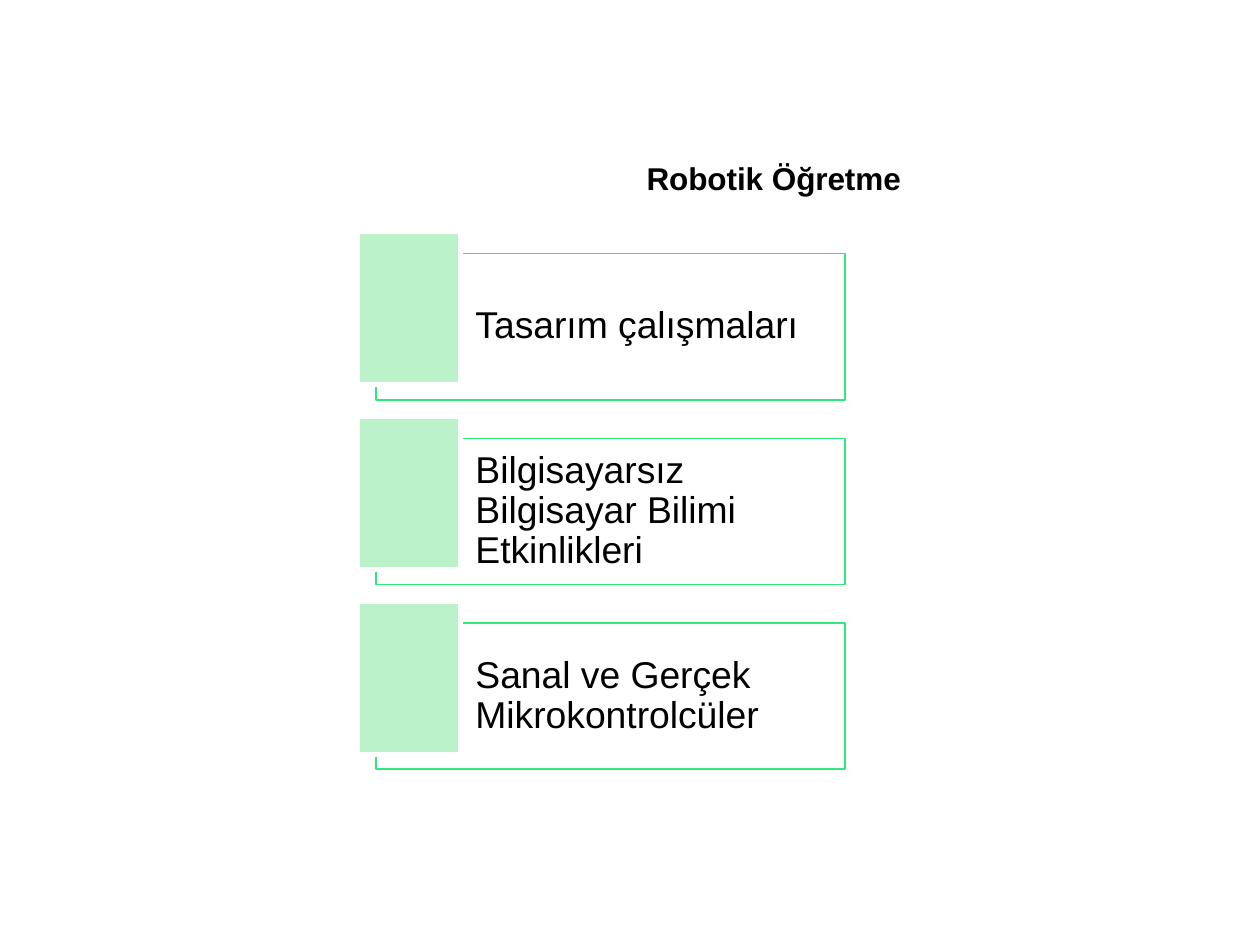
from dataclasses import dataclass

from lxml import etree
from pptx import Presentation
from pptx.dml.color import RGBColor
from pptx.enum.shapes import MSO_SHAPE
from pptx.enum.text import MSO_ANCHOR, PP_ALIGN
from pptx.oxml.ns import qn
from pptx.shapes.autoshape import Shape
from pptx.slide import Slide
from pptx.text.text import TextFrame
from pptx.util import Inches, Pt

WHITE = RGBColor(0xFF, 0xFF, 0xFF)
BLACK = RGBColor(0x00, 0x00, 0x00)
GREEN = RGBColor(0x31, 0xE9, 0x7B)
MINT = RGBColor(0xBC, 0xF2, 0xCA)

FIRST_CARD_TOP = 1.51
CARD_PITCH = 1.1
TAB_RISE = 0.13  # how far each tab stands above its card


@dataclass(frozen=True)
class Box:
    left: float
    top: float
    width: float
    height: float

    def lengths(self) -> tuple[Inches, ...]:
        return tuple(Inches(v) for v in (self.left, self.top, self.width, self.height))


@dataclass(frozen=True)
class Card:
    label: str
    top: float


LABELS = (
    "Tasarım çalışmaları",
    "Bilgisayarsız Bilgisayar Bilimi Etkinlikleri",
    "Sanal ve Gerçek Mikrokontrolcüler",
)
CARDS = [Card(label, FIRST_CARD_TOP + row * CARD_PITCH) for row, label in enumerate(LABELS)]


def add_text(slide: Slide, box: Box, text: str, size: float, bold: bool = False) -> TextFrame:
    frame = slide.shapes.add_textbox(*box.lengths()).text_frame
    frame.word_wrap = True
    paragraph = frame.paragraphs[0]
    paragraph.text = text
    paragraph.alignment = PP_ALIGN.LEFT
    paragraph.font.name = "Arial"
    paragraph.font.size = Pt(size)
    paragraph.font.bold = bold
    paragraph.font.color.rgb = BLACK
    return frame


def add_rectangle(slide: Slide, box: Box, fill: RGBColor, line: RGBColor, width: float) -> Shape:
    shape = slide.shapes.add_shape(MSO_SHAPE.RECTANGLE, *box.lengths())
    shape.shadow.inherit = False
    shape.fill.solid()
    shape.fill.fore_color.rgb = fill
    shape.line.color.rgb = line
    shape.line.width = Pt(width)
    return shape


def set_fill_opacity(shape: Shape, percent: int) -> None:
    color = shape.element.spPr.find(qn("a:solidFill")).find(qn("a:srgbClr"))
    etree.SubElement(color, qn("a:alpha")).set("val", str(percent * 1000))


def add_card(slide: Slide, card: Card) -> None:
    # Outline
    box = Box(2.24, card.top, 2.79, 0.87)
    outline = add_rectangle(slide, box, WHITE, GREEN, 0.75)
    set_fill_opacity(outline, 40)

    # Label, indented past the tab
    frame = add_text(slide, box, card.label, 16)
    frame.margin_left = Inches(0.59)
    frame.margin_top = frame.margin_right = frame.margin_bottom = Inches(0.07)
    frame.vertical_anchor = MSO_ANCHOR.MIDDLE
    frame.paragraphs[0].line_spacing = 0.9

    # Mint tab over the upper left corner
    add_rectangle(slide, Box(2.13, card.top - TAB_RISE, 0.61, 0.91), MINT, WHITE, 2)


def main() -> None:
    # Slide in 4:3 format
    presentation = Presentation()
    presentation.slide_width = Inches(7.5)
    presentation.slide_height = Inches(7.5) * 3 // 4
    slide = presentation.slides.add_slide(presentation.slide_layouts[6])

    # Title
    add_text(slide, Box(3.75, 0.9, 1.95, 0.56), "Robotik Öğretme", 13.5, bold=True)

    # Cards
    for card in CARDS:
        add_card(slide, card)

    presentation.save("out.pptx")


if __name__ == "__main__":
    main()
